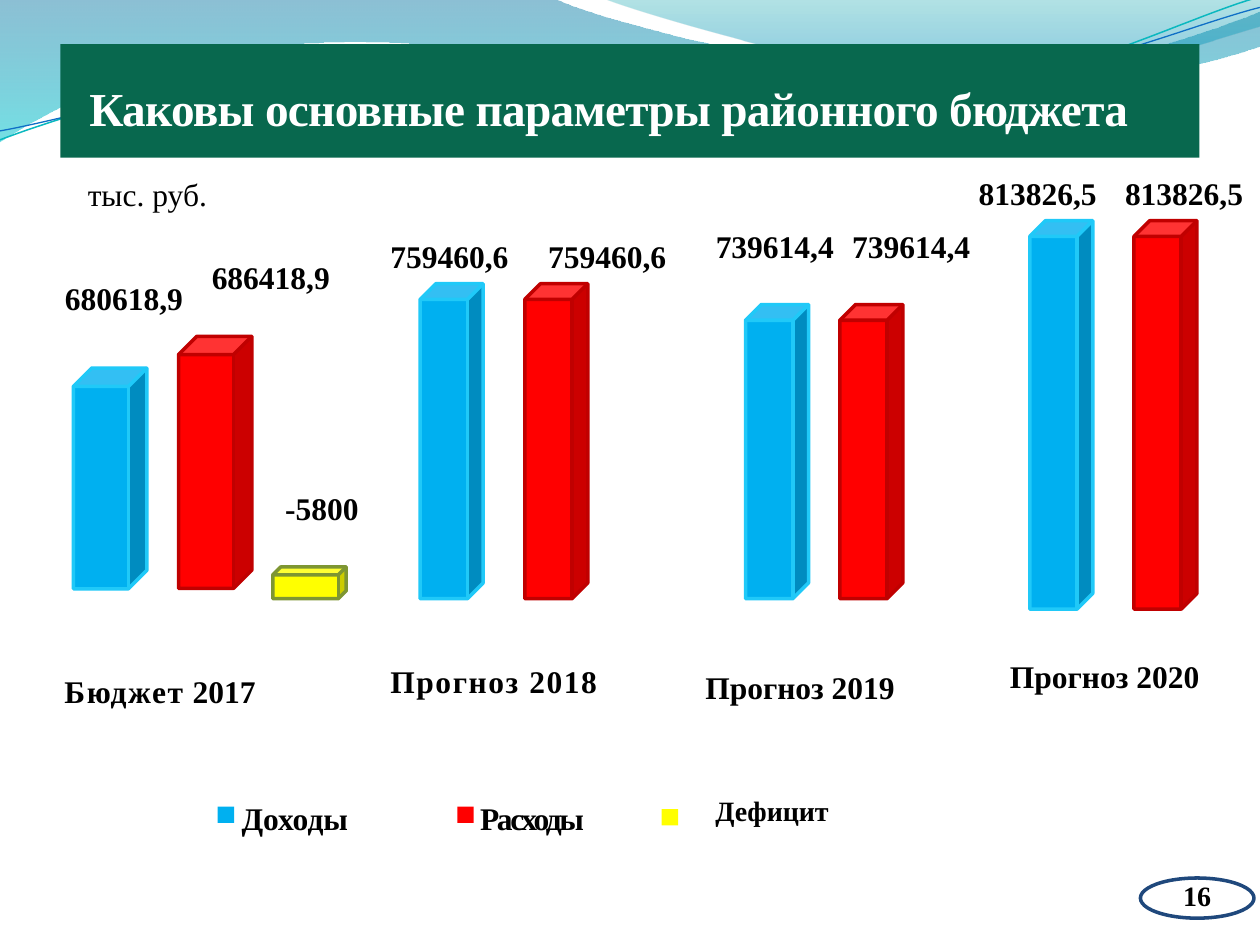
from lxml.etree import SubElement
from pptx import Presentation
from pptx.dml.color import RGBColor
from pptx.enum.shapes import MSO_SHAPE
from pptx.enum.text import MSO_ANCHOR, PP_ALIGN
from pptx.oxml.ns import qn
from pptx.util import Cm, Pt

RECTANGLE, CUBE, OVAL = MSO_SHAPE.RECTANGLE, MSO_SHAPE.CUBE, MSO_SHAPE.OVAL
LEFT, CENTER = PP_ALIGN.LEFT, PP_ALIGN.CENTER
MIDDLE, BOTTOM = MSO_ANCHOR.MIDDLE, MSO_ANCHOR.BOTTOM
FONT = "Times New Roman"
CURVE_STEPS = 24

COLORS = {
    "text": "000000", "white": "FFFFFF", "title bar": "08684E", "badge": "1F487C",
    "income": "00B0F0", "income edge": "20C9F8",
    "expense": "FF0000", "expense edge": "C00000",
    "deficit": "FFFF00", "deficit edge": "7E9632",
    "wave blue": "0074A1", "wave cyan": "00C6CF",
    "wave teal": "00A1A9", "wave sky": "008BBF",
    "line teal": "0AB8BF", "line blue": "0F6FC6",
}

WAVES = [
    ([(0, 0), (11.18, -0.03)],
     [(12.09, 0.43, 16.87, 1.6, 19.25, 1.6), (21.67, 1.6, 24.33, 0.66, 25.4, 0.23),
      (25.43, 0.91), (24.97, 1.12, 22.1, 1.93, 18.95, 1.9),
      (15.8, 1.9, 9.7, 0.71, 6.53, 0.86), (3.28, 0.91, 1.17, 2.11, -0.03, 2.87)],
     [("wave blue", 0, 45), ("wave cyan", 1, 55)]),
    ([(12.17, -0.03)],
     [(12.93, 0.28, 17.32, 1.57, 19.53, 1.65), (21.74, 1.75, 24.41, 0.81, 25.4, 0.53),
      (25.4, 0)],
     [("wave teal", 0, 30), ("wave sky", 0.8, 45)]),
]
WAVE_LINES = [
    ([(0, 2.82)],
     [(1.22, 2.36, 4.01, 1.45, 7.04, 1.32), (10.03, 1.19, 15.06, 2.26, 18.11, 2.03),
      (21.16, 1.8, 23.83, 0.38, 25.35, -0.05)], "line teal", 0.85),
    ([(0, 2.64)],
     [(1.19, 2.44, 4.17, 1.55, 7.19, 1.42), (10.24, 1.3, 15.16, 2.13, 18.21, 1.9),
      (21.23, 1.7, 23.9, 0.53, 25.4, 0.15)], "line blue", 0.75),
]
BARS = [
    ("income", 1.48, 7.42, 1.48, 4.45, "680618,9", 1.06, 5.5),
    ("expense", 3.6, 6.78, 1.48, 5.08, "686418,9", 4.02, 5.08),
    ("deficit", 5.5, 11.43, 1.48, 0.64, "-5800", 5.5, 9.74),
    ("income", 8.47, 5.72, 1.27, 6.35, "759460,6", 7.62, 4.65),
    ("expense", 10.58, 5.72, 1.27, 6.35, "759460,6", 10.8, 4.65),
    ("income", 15.03, 6.14, 1.27, 5.93, "739614,4", 14.18, 4.45),
    ("expense", 16.93, 6.14, 1.27, 5.93, "739614,4", 16.93, 4.45),
    ("income", 20.76, 4.45, 1.27, 7.83, "813826,5", 19.48, 3.38),
    ("expense", 22.86, 4.45, 1.27, 7.83, "813826,5", 22.43, 3.38),
]


def rgb(name):
    return RGBColor.from_string(COLORS[name])


def outline_points(points, segments):
    points = list(points)
    for segment in segments:
        if len(segment) == 2:
            points.append(segment)
            continue
        x0, y0 = points[-1]
        x1, y1, x2, y2, x3, y3 = segment
        for step in range(1, CURVE_STEPS + 1):
            t = step / CURVE_STEPS
            a, b, c, d = (1 - t) ** 3, 3 * t * (1 - t) ** 2, 3 * t * t * (1 - t), t ** 3
            points.append((a * x0 + b * x1 + c * x2 + d * x3,
                           a * y0 + b * y1 + c * y2 + d * y3))
    return [(Cm(x), Cm(y)) for x, y in points]


def add_outline(slide, points, segments, close):
    start, *rest = outline_points(points, segments)
    builder = slide.shapes.build_freeform(*start)
    builder.add_line_segments(rest, close=close)
    shape = builder.convert_to_shape()
    shape.shadow.inherit = False
    return shape


def add_wave(slide, points, segments, stops):
    shape = add_outline(slide, points, segments, True)
    shape.line.fill.background()
    shape.fill.gradient()
    shape.fill.gradient_angle = 270
    for stop, (color, position, opacity) in zip(shape.fill.gradient_stops, stops):
        stop.color.rgb = rgb(color)
        stop.position = position
    colors = shape.element.spPr.iter(qn("a:srgbClr"))
    for element, (_, _, opacity) in zip(list(colors), stops):
        SubElement(element, qn("a:alpha"), val=str(opacity * 1000))


def add_wave_line(slide, points, segments, color, width):
    shape = add_outline(slide, points, segments, False)
    shape.fill.background()
    shape.line.color.rgb = rgb(color)
    shape.line.width = Pt(width)


def add_solid(slide, kind, left, top, width, height, fill, edge=None):
    shape = slide.shapes.add_shape(kind, Cm(left), Cm(top), Cm(width), Cm(height))
    shape.shadow.inherit = False
    shape.fill.solid()
    shape.fill.fore_color.rgb = rgb(fill)
    if edge:
        shape.line.color.rgb = rgb(edge)
        shape.line.width = Pt(2)
    else:
        shape.line.fill.background()
    return shape


def clear_margins(frame):
    frame.margin_left = frame.margin_right = frame.margin_top = frame.margin_bottom = 0


def write(frame, parts, size=18, bold=True, color="text"):
    paragraph = frame.paragraphs[0]
    for text, spacing in parts:
        run = paragraph.add_run()
        run.text = text
        if spacing:
            run.font._element.set("spc", str(round(spacing * 100)))
    paragraph.font.name = FONT
    paragraph.font.size = Pt(size)
    paragraph.font.bold = bold
    paragraph.font.color.rgb = rgb(color)
    return paragraph


def add_text(slide, left, top, width, parts, tight=False, height=1.02, **style):
    box = slide.shapes.add_textbox(Cm(left), Cm(top), Cm(width), Cm(height))
    box.text_frame.word_wrap = True
    if tight:
        clear_margins(box.text_frame)
    write(box.text_frame, parts, **style)


def add_title(slide):
    bar = add_solid(slide, RECTANGLE, 1.22, 0.89, 22.96, 2.29, "title bar")
    title = slide.shapes.title
    bar.element.addnext(title.element)
    title.left, title.top, title.width, title.height = Cm(1.52), Cm(0.64), Cm(22.35), Cm(2.11)
    frame = title.text_frame
    clear_margins(frame)
    frame.margin_left = Cm(0.28)
    frame.vertical_anchor = BOTTOM
    paragraph = write(frame, [("Каковы основные параметры районного бюджета", -0.4)],
                      size=27, color="white")
    paragraph.alignment = LEFT


def add_legend(slide):
    for color, left, top in [("income", 4.39, 16.26), ("expense", 9.22, 16.26),
                             ("deficit", 13.34, 16.31)]:
        add_solid(slide, RECTANGLE, left, top, 0.33, 0.33, color)
    add_text(slide, 4.87, 16.1, 2.57, [("Доходы", 0)], tight=True, height=0.76)
    add_text(slide, 9.68, 16.1, 2.31, [("Расходы", -1.4)], tight=True, height=0.76)
    add_text(slide, 14.17, 15.88, 3.61, [("Дефицит", 0)], height=0.94, size=16)


def add_period_names(slide):
    add_text(slide, 1.3, 13.54, 6.38, [("Бюджет", 0.9), (" 2017", 0)], tight=True, height=0.76)
    add_text(slide, 7.87, 13.34, 6, [("Прогноз 2018", 0.9)], tight=True, height=0.76)
    add_text(slide, 13.97, 13.34, 5.8, [("Прогноз 2019", 0)])
    add_text(slide, 20.11, 13.13, 5.29, [("Прогноз 2020", 0)])


def add_page_number(slide):
    badge = add_solid(slide, OVAL, 22.99, 17.7, 2.29, 0.81, "white", "badge")
    clear_margins(badge.text_frame)
    badge.text_frame.margin_bottom = Cm(0.1)
    badge.text_frame.vertical_anchor = MIDDLE
    write(badge.text_frame, [("16", 0)], size=16).alignment = CENTER


def main():
    presentation = Presentation()
    presentation.slide_width, presentation.slide_height = Cm(25.4), Cm(19.05)
    slide = presentation.slides.add_slide(presentation.slide_layouts[5])
    for wave in WAVES:
        add_wave(slide, *wave)
    for wave_line in WAVE_LINES:
        add_wave_line(slide, *wave_line)
    add_title(slide)
    add_text(slide, 1.52, 3.4, 3.07, [("тыс. руб.", 0)], bold=False)
    for series, left, top, width, height, value, label_left, label_top in BARS:
        add_solid(slide, CUBE, left, top, width, height, series, series + " edge")
        add_text(slide, label_left, label_top, 2.97, [(value, 0)])
    add_period_names(slide)
    add_legend(slide)
    add_page_number(slide)
    presentation.save("out.pptx")


if __name__ == "__main__":
    main()
